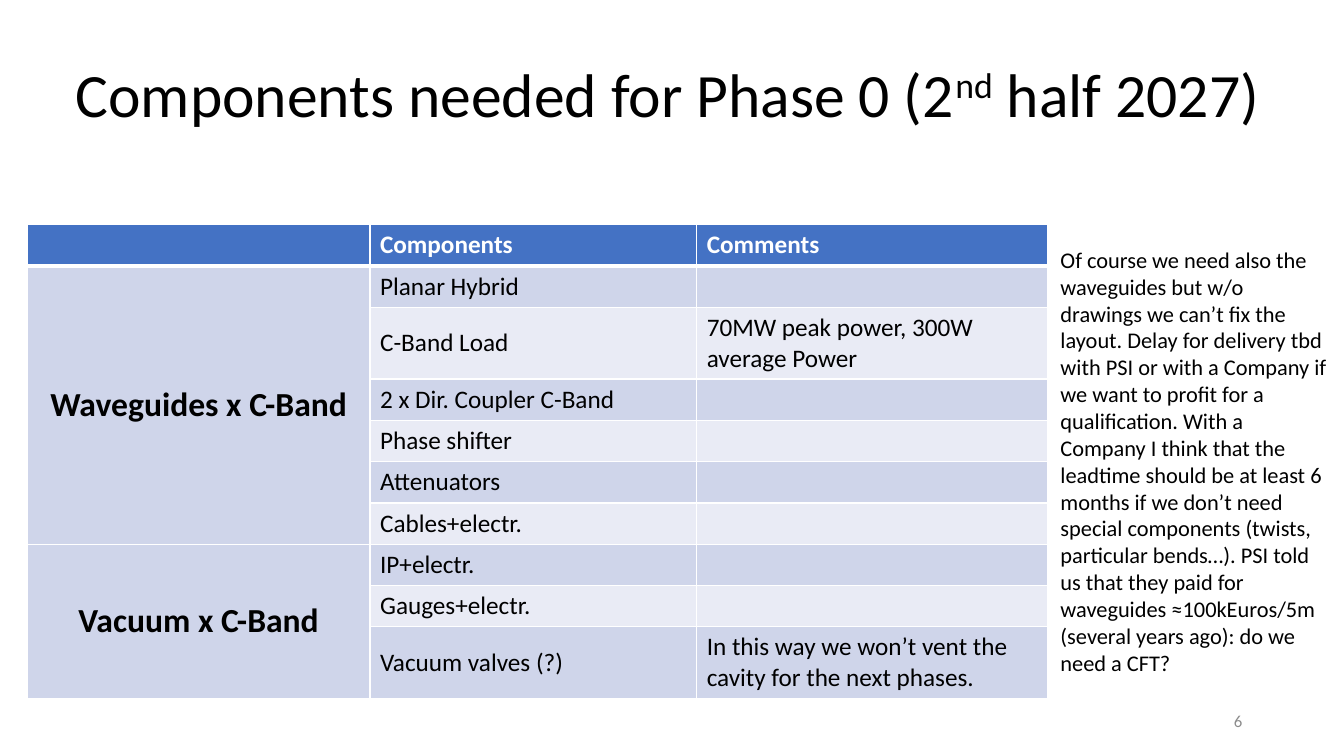
from dataclasses import dataclass

from lxml import etree
from pptx import Presentation
from pptx.dml.color import RGBColor
from pptx.enum.text import MSO_ANCHOR, MSO_AUTO_SIZE, PP_ALIGN
from pptx.oxml.ns import qn
from pptx.util import Inches, Pt

LEFT, CENTER, RIGHT = PP_ALIGN.LEFT, PP_ALIGN.CENTER, PP_ALIGN.RIGHT
TOP, MIDDLE = MSO_ANCHOR.TOP, MSO_ANCHOR.MIDDLE
NO_FIT, GROW = MSO_AUTO_SIZE.NONE, MSO_AUTO_SIZE.SHAPE_TO_FIT_TEXT

FONT = "Calibri"
BLACK = RGBColor(0x00, 0x00, 0x00)
WHITE = RGBColor(0xFF, 0xFF, 0xFF)
GREY = RGBColor(0x8C, 0x8C, 0x8C)
HEADER_BLUE = RGBColor(0x44, 0x72, 0xC4)
BAND_DARK = RGBColor(0xCF, 0xD5, 0xEA)
BAND_LIGHT = RGBColor(0xE9, 0xEB, 0xF5)

COLUMN_WIDTHS = (3.4, 3.24, 3.48)
ROW_HEIGHT = 0.41
HEADINGS = ("", "Components", "Comments")


@dataclass(frozen=True)
class Component:
    name: str
    comment: str = ""


@dataclass(frozen=True)
class Group:
    name: str
    components: tuple[Component, ...]


@dataclass(frozen=True)
class Note:
    text: str
    left: float
    top: float
    width: float
    height: float
    size: int
    color: RGBColor
    align: PP_ALIGN
    anchor: MSO_ANCHOR
    fit: MSO_AUTO_SIZE


GROUPS = (
    Group("Waveguides x C-Band", (
        Component("Planar Hybrid"),
        Component("C-Band Load", "70MW peak power, 300W average Power"),
        Component("2 x Dir. Coupler C-Band"),
        Component("Phase shifter"),
        Component("Attenuators"),
        Component("Cables+electr."),
    )),
    Group("Vacuum x C-Band", (
        Component("IP+electr."),
        Component("Gauges+electr."),
        Component("Vacuum valves (?)",
                  "In this way we won’t vent the cavity for the next phases."),
    )),
)

NOTES = (
    Note("Of course we need also the waveguides but w/o drawings we can’t fix "
         "the layout. Delay for delivery tbd with PSI or with a Company if we "
         "want to profit for a qualification. With a Company I think that the "
         "leadtime should be at least 6 months if we don’t need special "
         "components (twists, particular bends…). PSI told us that they paid "
         "for waveguides ≈100kEuros/5m (several years ago): do we need a CFT?",
         10.42, 2.39, 2.86, 4.41, 16, BLACK, LEFT, TOP, GROW),
    Note("6", 9.42, 6.95, 3, 0.4, 12, GREY, RIGHT, MIDDLE, NO_FIT),
)


def add_run(p, text: str, size: int, color: RGBColor, bold: bool = False):
    r = p.add_run()
    r.text = text
    r.font.name = FONT
    r.font.size = Pt(size)
    r.font.bold = bold
    r.font.color.rgb = color
    return r


def add_title(slide) -> None:
    sp = slide.shapes.title
    sp.left, sp.top = Inches(0.65), Inches(0.24)
    sp.width, sp.height = Inches(12.04), Inches(1.45)
    tf = sp.text_frame
    tf.auto_size = NO_FIT
    tf.vertical_anchor = MIDDLE
    p = tf.paragraphs[0]
    p.alignment = LEFT
    p.line_spacing = 0.9
    add_run(p, "Components needed for Phase 0 (2", 44, BLACK)
    ordinal = add_run(p, "nd", 44, BLACK)
    ordinal._r.get_or_add_rPr().set("baseline", "30000")
    add_run(p, " half 2027)", 44, BLACK)


def set_borders(cell, bottom: float) -> None:
    """Draw white cell borders, 1 pt except for the given bottom width."""
    tc_pr = cell._tc.get_or_add_tcPr()
    for side, width in (("L", 1), ("R", 1), ("T", 1), ("B", bottom)):
        ln = etree.SubElement(tc_pr, qn(f"a:ln{side}"), w=str(Pt(width)))
        fill = etree.SubElement(ln, qn("a:solidFill"))
        etree.SubElement(fill, qn("a:srgbClr"), val=str(WHITE))


def fill_cell(cell, text: str, fill: RGBColor, size: int = 18,
              color: RGBColor = BLACK, bold: bool = False,
              align: PP_ALIGN = LEFT, anchor: MSO_ANCHOR = MIDDLE,
              bottom: float = 1) -> None:
    set_borders(cell, bottom)
    cell.fill.solid()
    cell.fill.fore_color.rgb = fill
    cell.vertical_anchor = anchor
    p = cell.text_frame.paragraphs[0]
    p.alignment = align
    if text:
        add_run(p, text, size, color, bold)


def add_component_table(slide) -> None:
    row_count = 1 + sum(len(group.components) for group in GROUPS)
    frame = slide.shapes.add_table(
        row_count, len(COLUMN_WIDTHS), Inches(0.27), Inches(2.23),
        Inches(sum(COLUMN_WIDTHS)), Inches(row_count * ROW_HEIGHT))
    table = frame.table
    for column, width in zip(table.columns, COLUMN_WIDTHS):
        column.width = Inches(width)

    for col, heading in enumerate(HEADINGS):
        fill_cell(table.cell(0, col), heading, HEADER_BLUE, color=WHITE,
                  bold=True, anchor=TOP, bottom=3)

    row = 1
    for group in GROUPS:
        first, last = row, row + len(group.components) - 1
        table.cell(first, 0).merge(table.cell(last, 0))
        for component in group.components:
            band = BAND_DARK if row % 2 else BAND_LIGHT
            fill_cell(table.cell(row, 0), group.name if row == first else "",
                      BAND_DARK, size=24, bold=True, align=CENTER)
            fill_cell(table.cell(row, 1), component.name, band)
            fill_cell(table.cell(row, 2), component.comment, band)
            row += 1
    frame.height = Inches(4.64)


def add_note(slide, note: Note) -> None:
    sp = slide.shapes.add_textbox(Inches(note.left), Inches(note.top),
                                  Inches(note.width), Inches(note.height))
    tf = sp.text_frame
    tf.word_wrap = True
    tf.auto_size = note.fit
    tf.vertical_anchor = note.anchor
    p = tf.paragraphs[0]
    p.alignment = note.align
    add_run(p, note.text, note.size, note.color)


def main() -> None:
    prs = Presentation()
    prs.slide_width, prs.slide_height = Inches(13.33), Inches(7.5)
    title_only = prs.slide_layouts[5]
    slide = prs.slides.add_slide(title_only)
    add_component_table(slide)
    add_title(slide)
    for note in NOTES:
        add_note(slide, note)
    prs.save("out.pptx")


if __name__ == "__main__":
    main()
